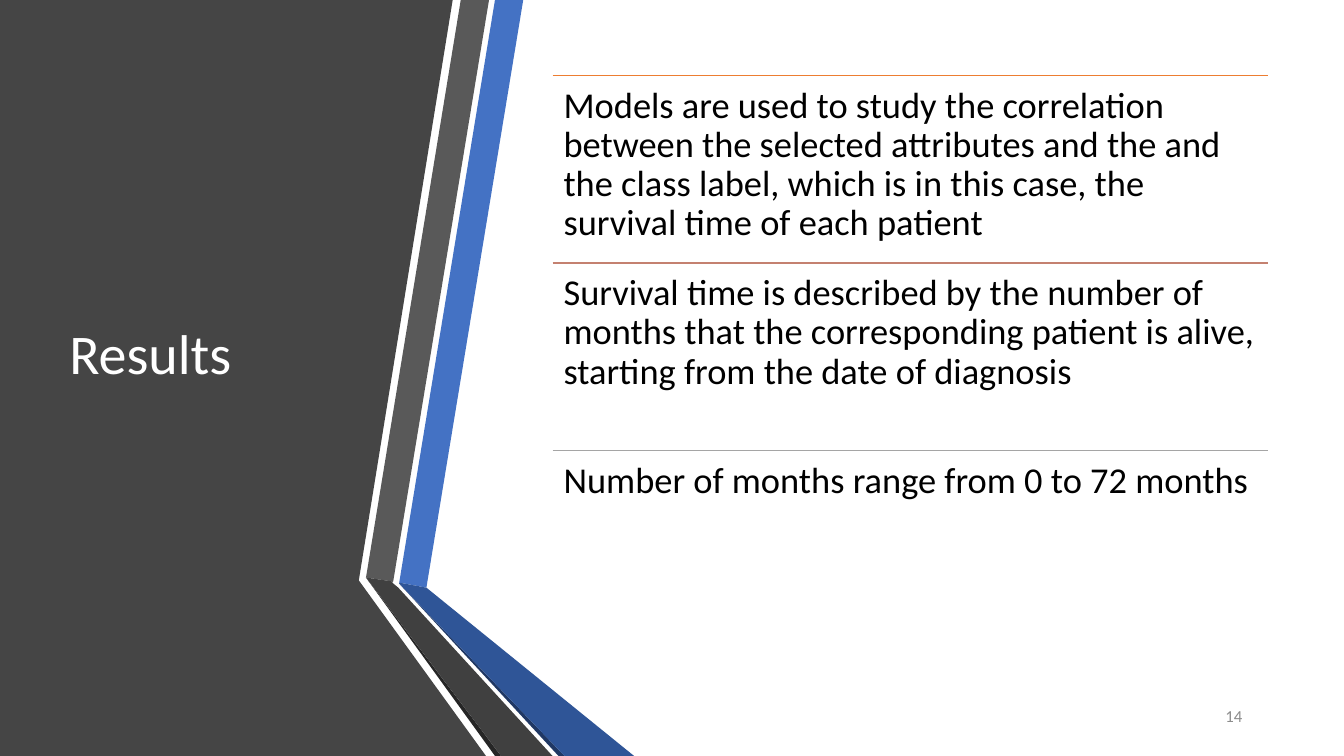
from dataclasses import dataclass

from lxml import etree
from pptx import Presentation
from pptx.dml.color import RGBColor
from pptx.enum.shapes import MSO_CONNECTOR
from pptx.enum.text import MSO_ANCHOR, PP_ALIGN
from pptx.oxml.ns import qn
from pptx.util import Inches, Pt

STRAIGHT = MSO_CONNECTOR.STRAIGHT
TOP, MIDDLE = MSO_ANCHOR.TOP, MSO_ANCHOR.MIDDLE
LEFT, RIGHT = PP_ALIGN.LEFT, PP_ALIGN.RIGHT


@dataclass(frozen=True)
class Theme:
    font: str = "Calibri"
    title_size: int = 40
    body_size: int = 26
    number_size: int = 12
    white: str = "FFFFFF"
    black: str = "000000"
    number: str = "8C8C8C"
    panel: str = "454545"
    blue: str = "4472C4"
    blue_fold: str = "2F5597"
    blue_edge: str = "203864"
    gray: str = "595959"
    gray_fold: str = "404040"
    gray_edge: str = "262626"


THEME = Theme()

# Side panel and folded ribbons, from back to front
PANEL_AND_RIBBONS = [
    (THEME.panel, [(0, 0), (4.49, 0), (3.56, 5.75), (3.56, 5.76), (4.82, 7.5), (0, 7.5)]),
    (THEME.blue, [(3.96, 5.78), (4.23, 5.83), (5.19, 0), (4.91, 0)]),
    (THEME.gray, [(4.85, 0), (4.57, 0), (3.63, 5.73), (3.9, 5.77)]),
    (THEME.gray_edge, [(3.63, 5.73), (4.91, 7.5), (4.97, 7.5)]),
    (THEME.blue_edge, [(3.96, 5.79), (5.54, 7.5), (5.6, 7.5)]),
    (THEME.blue_fold, [(3.96, 5.79), (5.6, 7.5), (6.29, 7.5), (4.23, 5.83), (3.96, 5.78)]),
    (THEME.gray_fold, [(5.48, 7.5), (3.95, 5.83), (3.89, 5.78), (3.9, 5.77),
                       (3.63, 5.73), (4.97, 7.5)]),
]

# Rule colour and text of each finding
FINDINGS = [
    ("ED7D31", "Models are used to study the correlation between the selected attributes "
               "and the and the class label, which is in this case, the survival time of "
               "each patient"),
    ("C48170", "Survival time is described by the number of months that the corresponding "
               "patient is alive, starting from the date of diagnosis"),
    ("A5A5A5", "Number of months range from 0 to 72 months"),
]
FINDINGS_LEFT, FINDINGS_TOP = 5.48, 0.75
FINDING_WIDTH, FINDING_HEIGHT = 7.1, 1.86


def add_polygon(slide, color, points):
    corners = [(Inches(x), Inches(y)) for x, y in points]
    builder = slide.shapes.build_freeform(*corners[0])
    builder.add_line_segments(corners[1:], close=True)
    sp = builder.convert_to_shape()
    sp.shadow.inherit = False
    sp.fill.solid()
    sp.fill.fore_color.rgb = RGBColor.from_string(color)
    sp.line.fill.background()


def add_rule(slide, x, y, width, color):
    rule = slide.shapes.add_connector(
        STRAIGHT, Inches(x), Inches(y), Inches(x + width), Inches(y))
    rule.line.color.rgb = RGBColor.from_string(color)
    rule.line.width = Pt(1)
    etree.SubElement(rule.element.spPr, qn("a:effectLst"))


def add_text(slide, box, text, size, color, anchor=MIDDLE, align=LEFT,
             inset=(0.1, 0.05), spacing=0.9):
    sp = slide.shapes.add_textbox(*(Inches(v) for v in box))
    tf = sp.text_frame
    tf.word_wrap = True
    tf.vertical_anchor = anchor
    tf.margin_left = tf.margin_right = Inches(inset[0])
    tf.margin_top = tf.margin_bottom = Inches(inset[1])
    p = tf.paragraphs[0]
    p.alignment = align
    p.line_spacing = spacing
    r = p.add_run()
    r.text = text
    r.font.name = THEME.font
    r.font.size = Pt(size)
    r.font.color.rgb = RGBColor.from_string(color)


def main():
    prs = Presentation()
    prs.slide_width, prs.slide_height = Inches(13.33), Inches(7.5)
    slide = prs.slides.add_slide(prs.slide_layouts[6])

    # Side panel with ribbons
    for color, points in PANEL_AND_RIBBONS:
        add_polygon(slide, color, points)

    # Title and slide number
    add_text(slide, (0.59, 0.75, 3.04, 5.58), "Results", THEME.title_size, THEME.white)
    add_text(slide, (11.23, 6.9, 1.19, 0.4), "14", THEME.number_size, THEME.number,
             align=RIGHT, spacing=1.0)

    # Findings, each under its own rule
    for i, (color, text) in enumerate(FINDINGS):
        y = FINDINGS_TOP + i * FINDING_HEIGHT
        add_rule(slide, FINDINGS_LEFT, y, FINDING_WIDTH, color)
        add_text(slide, (FINDINGS_LEFT, y, FINDING_WIDTH, FINDING_HEIGHT), text,
                 THEME.body_size, THEME.black, anchor=TOP, inset=(0.11, 0.11))

    prs.save("out.pptx")


if __name__ == "__main__":
    main()
